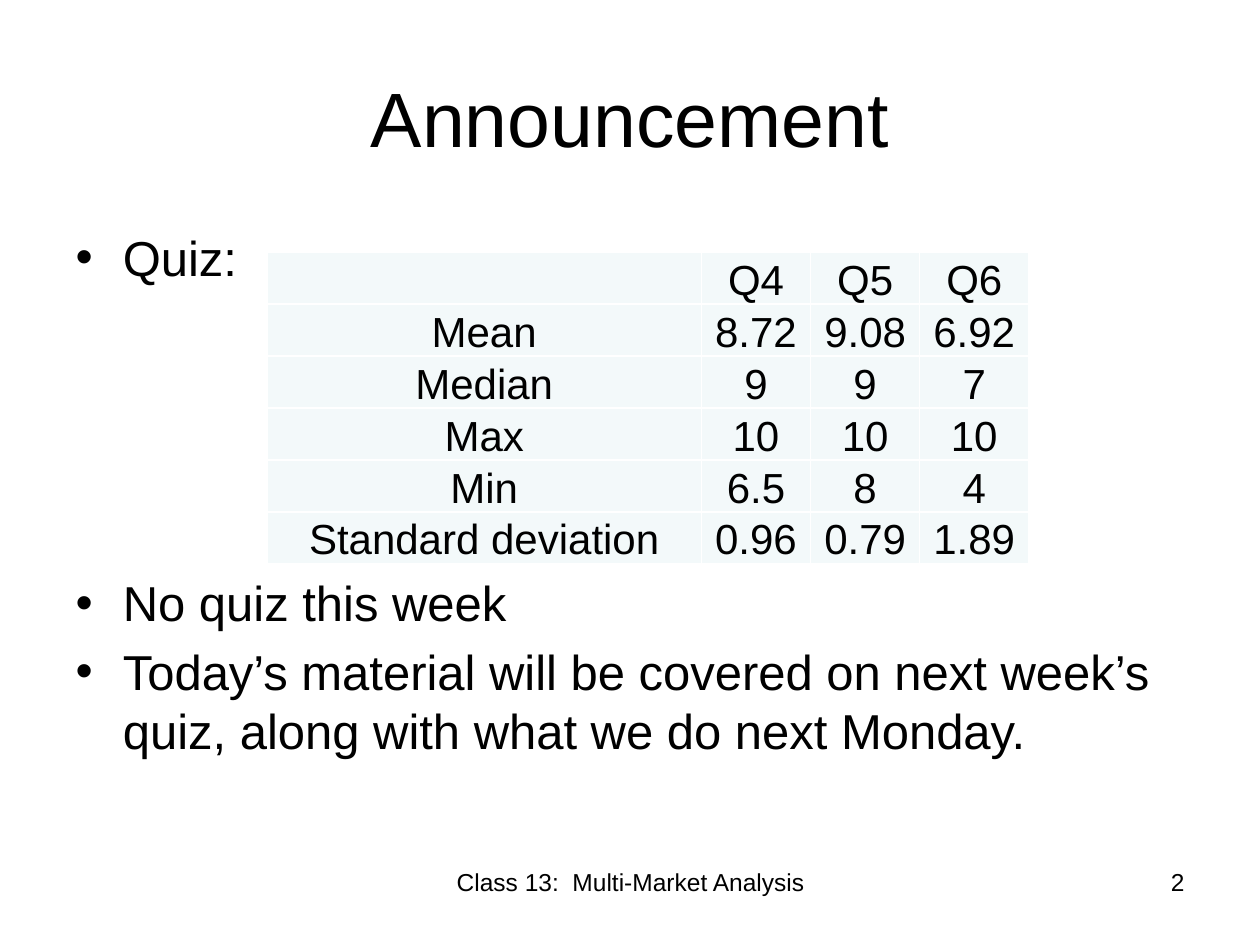
from dataclasses import dataclass

from lxml.etree import SubElement
from pptx import Presentation
from pptx.dml.color import RGBColor
from pptx.enum.text import MSO_ANCHOR, MSO_AUTO_SIZE, PP_ALIGN
from pptx.oxml.ns import qn
from pptx.util import Cm, Pt


@dataclass(frozen=True)
class Theme:
    font: str = "Arial"
    ink: str = "000000"
    cell: str = "F3F9FA"
    border: str = "FFFFFF"
    title: int = 44
    body: int = 28
    score: int = 24
    footer: int = 14


theme = Theme()


def style(frame, size, align):
    for paragraph in frame.paragraphs:
        paragraph.alignment = align
        for run in paragraph.runs:
            run.font.name = theme.font
            run.font.size = Pt(size)
            run.font.color.rgb = RGBColor.from_string(theme.ink)


def place(part, left, top, width, height):
    part.left, part.top = Cm(left), Cm(top)
    part.width, part.height = Cm(width), Cm(height)


deck = Presentation()
deck.slide_width, deck.slide_height = Cm(25.4), Cm(19.05)
slide = deck.slides.add_slide(deck.slide_layouts[1])

heading = slide.shapes.title
place(heading, 1.27, 0.76, 22.86, 3.18)
heading.text_frame.text = "Announcement"
style(heading.text_frame, theme.title, PP_ALIGN.CENTER)

announcements = slide.placeholders[1]
place(announcements, 1.27, 4.45, 22.86, 12.57)
announcements.text_frame.text = "\n".join([
    "Quiz:",
    "No quiz this week",
    "Today’s material will be covered on next week’s quiz, along with what we do next Monday.",
])
announcements.text_frame.auto_size = MSO_AUTO_SIZE.NONE
style(announcements.text_frame, theme.body, PP_ALIGN.LEFT)
announcements.text_frame.paragraphs[1].space_before = Pt(164)

footers = [
    ("Class 13:  Multi-Market Analysis", 8.69, 8.05, PP_ALIGN.CENTER),
    ("2", 18.21, 5.92, PP_ALIGN.RIGHT),
]
for wording, left, width, align in footers:
    footer = slide.shapes.add_textbox(Cm(left), Cm(17.35), Cm(width), Cm(1.32))
    footer.text_frame.word_wrap = True
    footer.text_frame.text = wording
    style(footer.text_frame, theme.footer, align)

quiz_scores = [
    ("", "Q4", "Q5", "Q6"),
    ("Mean", "8.72", "9.08", "6.92"),
    ("Median", "9", "9", "7"),
    ("Max", "10", "10", "10"),
    ("Min", "6.5", "8", "4"),
    ("Standard deviation", "0.96", "0.79", "1.89"),
]
column_widths = [8.76, 2.2, 2.2, 2.2]
row_heights = [1.05] + [0.97] * 5
scores = slide.shapes.add_table(
    len(row_heights), len(column_widths), Cm(5.38), Cm(5.08),
    Cm(sum(column_widths)), Cm(sum(row_heights)),
).table
for column, width in zip(scores.columns, column_widths):
    column.width = Cm(width)
for row, height, values in zip(scores.rows, row_heights, quiz_scores):
    row.height = Cm(height)
    for cell, value in zip(row.cells, values):
        cell.margin_left = cell.margin_right = cell.margin_top = Cm(0.03)
        cell.margin_bottom = Cm(0)
        cell.vertical_anchor = MSO_ANCHOR.BOTTOM
        cell.text_frame.text = value
        style(cell.text_frame, theme.score, PP_ALIGN.CENTER)
        properties = cell._tc.get_or_add_tcPr()
        for side in ("a:lnL", "a:lnR", "a:lnT", "a:lnB"):
            edge = SubElement(properties, qn(side), w=str(Pt(1)))
            paint = SubElement(edge, qn("a:solidFill"))
            SubElement(paint, qn("a:srgbClr"), val=theme.border)
        cell.fill.solid()
        cell.fill.fore_color.rgb = RGBColor.from_string(theme.cell)

deck.save("out.pptx")
